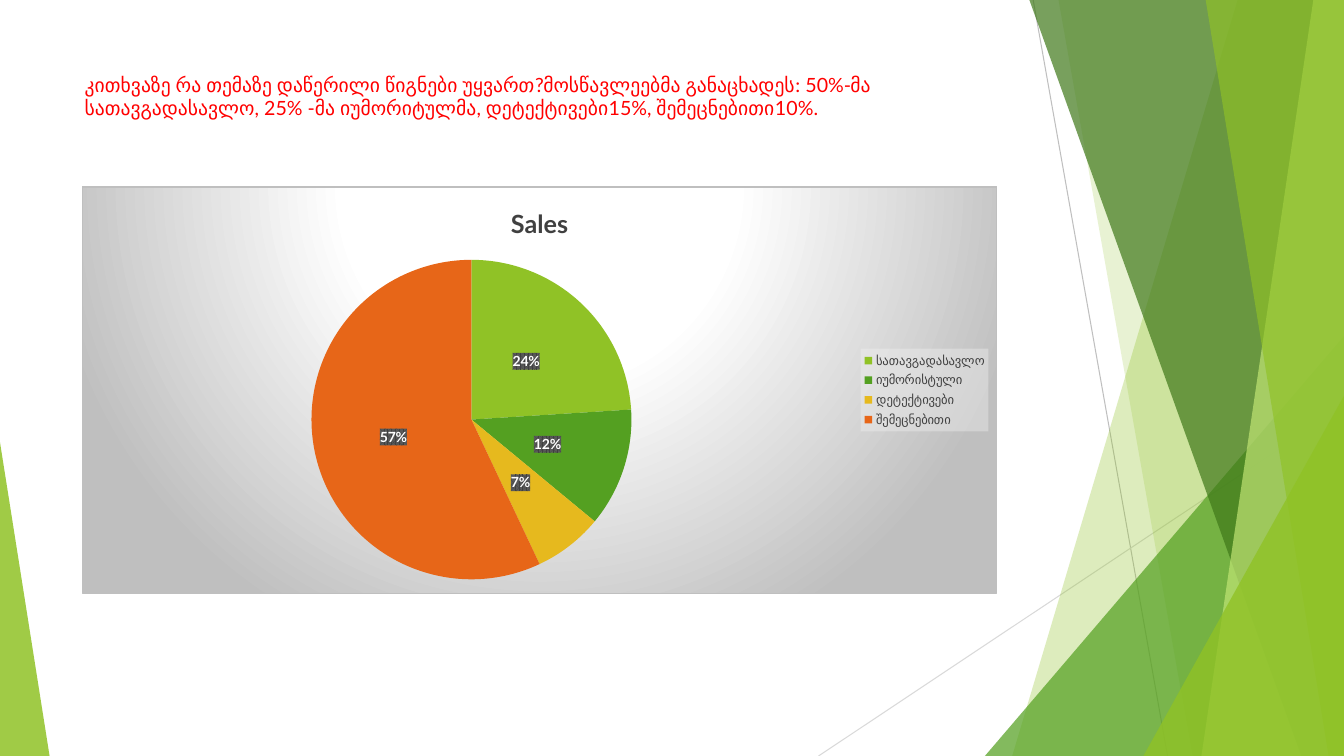
"""Build a slide with a pie chart of favourite book themes beside green facets."""
from dataclasses import dataclass

from lxml import etree
from pptx import Presentation
from pptx.chart.chart import Chart
from pptx.chart.data import CategoryChartData
from pptx.dml.color import RGBColor
from pptx.enum.chart import XL_CHART_TYPE, XL_LABEL_POSITION, XL_LEGEND_POSITION
from pptx.enum.shapes import MSO_CONNECTOR, MSO_SHAPE
from pptx.enum.text import MSO_ANCHOR, MSO_AUTO_SIZE, PP_ALIGN
from pptx.oxml import parse_xml
from pptx.oxml.ns import nsdecls, qn
from pptx.shapes.autoshape import Shape
from pptx.slide import Slide
from pptx.text.text import Font
from pptx.util import Pt

PIE = XL_CHART_TYPE.PIE
CENTER = XL_LABEL_POSITION.CENTER
RIGHT = XL_LEGEND_POSITION.RIGHT
STRAIGHT = MSO_CONNECTOR.STRAIGHT
TRIANGLE = MSO_SHAPE.ISOSCELES_TRIANGLE
TOP = MSO_ANCHOR.TOP
NO_AUTOFIT = MSO_AUTO_SIZE.NONE
LEFT = PP_ALIGN.LEFT

LIME = RGBColor(0x90, 0xC2, 0x26)
GREEN = RGBColor(0x54, 0xA0, 0x21)
FOREST = RGBColor(0x3F, 0x78, 0x19)
PALE_LIME = RGBColor(0xC0, 0xE4, 0x74)
GOLD = RGBColor(0xE6, 0xB9, 0x1E)
ORANGE = RGBColor(0xE7, 0x66, 0x18)
SILVER = RGBColor(0xBF, 0xBF, 0xBF)
LIGHT_GREY = RGBColor(0xD9, 0xD9, 0xD9)
CHARCOAL = RGBColor(0x40, 0x40, 0x40)
BLACK = RGBColor(0, 0, 0)
WHITE = RGBColor(0xFF, 0xFF, 0xFF)
RED = RGBColor(0xFF, 0, 0)

FONT = "Lato"
WIDTH, HEIGHT = 960, 540
BAND_TOP = -0.6
TITLE = (
    "კითხვაზე რა თემაზე დაწერილი წიგნები უყვართ?მოსწავლეებმა განაცხადეს: 50%-მა "
    "სათავგადასავლო, 25% -მა იუმორიტულმა, დეტექტივები15%, შემეცნებითი10%."
)

CHART_FILL = """<a:gradFill><a:gsLst>
<a:gs pos="0"><a:srgbClr val="FFFFFF"/></a:gs>
<a:gs pos="39000"><a:srgbClr val="FFFFFF"/></a:gs>
<a:gs pos="100000"><a:srgbClr val="BFBFBF"/></a:gs></a:gsLst>
<a:path path="circle"><a:fillToRect l="50000" t="-80000" r="50000" b="180000"/></a:path>
</a:gradFill><a:ln w="9525"><a:solidFill><a:srgbClr val="BFBFBF"/></a:solidFill></a:ln>"""
LEGEND_FILL = """<a:solidFill><a:srgbClr val="F2F2F2"><a:alpha val="39000"/></a:srgbClr>
</a:solidFill><a:ln><a:noFill/></a:ln>"""
LABEL_FILL = """<a:pattFill prst="pct75"><a:fgClr><a:srgbClr val="404040"/></a:fgClr>
<a:bgClr><a:srgbClr val="595959"/></a:bgClr></a:pattFill><a:ln><a:noFill/></a:ln>"""


@dataclass(frozen=True)
class Ray:
    """A thin line between two points."""
    start: tuple[float, float]
    end: tuple[float, float]
    color: RGBColor


@dataclass(frozen=True)
class Band:
    """A full-height facet that reaches the right edge of the slide."""
    top_left: float
    bottom_left: float
    color: RGBColor
    opacity: int


@dataclass(frozen=True)
class Corner:
    """A right triangle standing on the bottom edge of the slide."""
    left: float
    top: float
    width: float
    apex: float
    color: RGBColor
    opacity: int


@dataclass(frozen=True)
class Theme:
    """A book theme with its share and slice colour."""
    name: str
    share: int
    color: RGBColor


RAYS = (
    Ray((738, 0), (834, HEIGHT), SILVER),
    Ray((WIDTH, 290), (584.7, HEIGHT), LIGHT_GREY),
)
FACETS = (
    Band(884.2, 723, LIME, 30),
    Band(756, 851.8, LIME, 20),
    Corner(703.5, 240, 256.5, 1, GREEN, 72),
    Band(735.1, 929.5, FOREST, 70),
    Band(938.2, 858.2, PALE_LIME, 70),
    Band(861.1, 949, LIME, 65),
    Corner(816.7, 282.7, 143.3, 1, LIME, 80),
    Corner(0, 316, 35.4, 0, LIME, 85),
)
THEMES = (
    Theme("სათავგადასავლო", 24, LIME),
    Theme("იუმორისტული", 12, GREEN),
    Theme("დეტექტივები", 7, GOLD),
    Theme("შემეცნებითი", 57, ORANGE),
)


def draw_ray(page: Slide, ray: Ray) -> None:
    """Draw one thin line without a shadow."""
    ends = [Pt(value) for value in ray.start + ray.end]
    line = page.shapes.add_connector(STRAIGHT, *ends)
    line.line.color.rgb = ray.color
    line.line.width = Pt(0.75)
    etree.SubElement(line.element.spPr, qn("a:effectLst"))


def outline_facet(page: Slide, facet: Band | Corner) -> Shape:
    """Add the unformatted outline of a band or corner."""
    if isinstance(facet, Corner):
        corner = page.shapes.add_shape(
            TRIANGLE, Pt(facet.left), Pt(facet.top), Pt(facet.width), Pt(HEIGHT - facet.top)
        )
        corner.adjustments[0] = facet.apex
        return corner
    builder = page.shapes.build_freeform(Pt(facet.top_left), Pt(BAND_TOP))
    rest = ((WIDTH, BAND_TOP), (WIDTH, HEIGHT), (facet.bottom_left, HEIGHT))
    builder.add_line_segments([(Pt(x), Pt(y)) for x, y in rest], close=True)
    return builder.convert_to_shape()


def draw_facet(page: Slide, facet: Band | Corner) -> None:
    """Draw one translucent facet."""
    shape = outline_facet(page, facet)
    shape.shadow.inherit = False
    shape.line.fill.background()
    shape.fill.solid()
    shape.fill.fore_color.rgb = facet.color
    tint = shape.element.spPr.find(f"{qn('a:solidFill')}/{qn('a:srgbClr')}")
    etree.SubElement(tint, qn("a:alpha"), val=str(facet.opacity * 1000))


def set_font(font: Font, size: float, color: RGBColor, bold: bool = False) -> None:
    """Apply the slide's typeface with a size, colour and weight."""
    font.name, font.size, font.bold = FONT, Pt(size), bold
    font.color.rgb = color


def write_title(page: Slide) -> None:
    """Place the title in front of the facets and format it."""
    title = page.shapes.title
    title.element.getparent().append(title.element)
    title.left, title.top, title.width, title.height = Pt(53.3), Pt(48.2), Pt(676.8), Pt(103.7)
    frame = title.text_frame
    frame.text = TITLE
    frame.word_wrap, frame.auto_size, frame.vertical_anchor = True, NO_AUTOFIT, TOP
    para = frame.paragraphs[0]
    para.alignment = LEFT
    set_font(para.font, 14, RED)


def fill_part(part: etree.ElementBase, fill: str) -> None:
    """Put fill and border ahead of a chart part's text properties."""
    properties = parse_xml(f"<c:spPr {nsdecls('c', 'a')}>{fill}</c:spPr>")
    part.find(qn("c:txPr")).addprevious(properties)


def add_pie(page: Slide) -> Chart:
    """Add the pie chart with its title, legend and percentages."""
    data = CategoryChartData()
    data.categories = [theme.name for theme in THEMES]
    data.add_series("Sales", [theme.share for theme in THEMES])
    chart = page.shapes.add_chart(PIE, Pt(58.5), Pt(133.2), Pt(653.8), Pt(290.9), data).chart
    set_font(chart.font, 10, BLACK)
    chart.has_title = True
    chart.chart_title.text_frame.text = "Sales"
    set_font(chart.chart_title.text_frame.paragraphs[0].font, 18, CHARCOAL, True)
    chart.has_legend = True
    chart.legend.position, chart.legend.include_in_layout = RIGHT, False
    set_font(chart.legend.font, 9, CHARCOAL)
    chart.plots[0].vary_by_categories = True
    series = chart.plots[0].series[0]
    for index, theme in enumerate(THEMES):
        fill = series.points[index].format.fill
        fill.solid()
        fill.fore_color.rgb = theme.color
    labels = series.data_labels
    labels.show_value, labels.show_percentage = False, True
    labels.number_format, labels.number_format_is_linked = "0%", False
    labels.position = CENTER
    set_font(labels.font, 10, WHITE, True)
    fill_part(chart.element, CHART_FILL)
    fill_part(next(chart.element.iter(qn("c:legend"))), LEGEND_FILL)
    fill_part(next(chart.element.iter(qn("c:dLbls"))), LABEL_FILL)
    return chart


def main() -> None:
    """Build and save the deck."""
    deck = Presentation()
    deck.slide_width, deck.slide_height = Pt(WIDTH), Pt(HEIGHT)
    page = deck.slides.add_slide(deck.slide_layouts[5])
    for ray in RAYS:
        draw_ray(page, ray)
    for facet in FACETS:
        draw_facet(page, facet)
    write_title(page)
    add_pie(page)
    deck.save("out.pptx")


if __name__ == "__main__":
    main()
